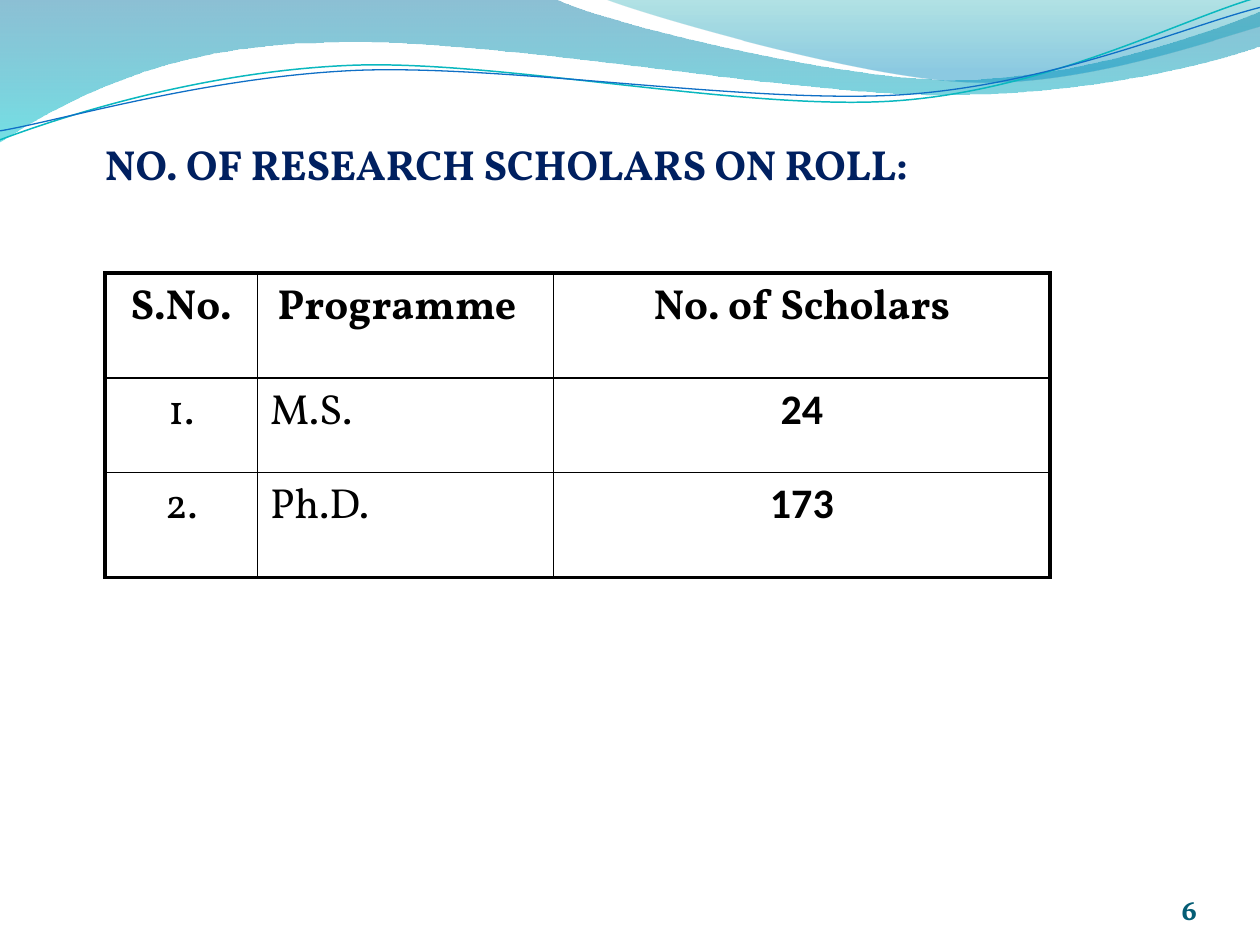
"""Builds a slide that lists the number of research scholars on roll."""
from dataclasses import dataclass
from math import cos, radians, sin

from lxml import etree
from pptx import Presentation
from pptx.dml.color import RGBColor
from pptx.enum.text import MSO_ANCHOR, PP_ALIGN
from pptx.oxml.ns import qn
from pptx.util import Cm, Pt

LEFT, CENTER, RIGHT = PP_ALIGN.LEFT, PP_ALIGN.CENTER, PP_ALIGN.RIGHT
BOTTOM = MSO_ANCHOR.BOTTOM
SERIF, SANS = "Vollkorn", "Calibri"
BLACK = "000000"
THIN, THICK = 1, 2.25
MARGIN = 2.12

Point = tuple[float, float]


@dataclass(frozen=True)
class Stop:
    color: str
    position: float
    opacity: int


@dataclass(frozen=True)
class Wave:
    box: tuple[float, float, float, float]
    start: Point
    segments: tuple[tuple[Point, ...], ...]
    stops: tuple[Stop, ...] = ()
    line_color: str = ""
    line_width: float = 0
    rotation: float = 0


@dataclass(frozen=True)
class Label:
    text: str
    size: float = 24
    font: str = SERIF
    color: str = BLACK
    bold: bool = True
    align: PP_ALIGN = CENTER


WAVES = (
    Wave((-0.03, -0.03, 25.45, 2.9), (0, -0.03), (
        ((11.18, -0.03),),
        ((12.09, 0.43), (16.87, 1.6), (19.25, 1.6)),
        ((21.67, 1.6), (24.33, 0.66), (25.4, 0.23)),
        ((25.43, 0.91),),
        ((24.97, 1.12), (22.1, 1.93), (18.95, 1.91)),
        ((15.8, 1.91), (9.7, 0.71), (6.53, 0.86)),
        ((3.28, 0.89), (1.17, 2.11), (-0.03, 2.87)),
        ((0, -0.03),),
    ), stops=(Stop("0074A1", 0, 45), Stop("00C6CF", 1, 55))),
    Wave((12.17, -0.03, 13.23, 1.78), (12.17, -0.03), (
        ((12.93, 0.28), (17.32, 1.57), (19.53, 1.65)),
        ((21.74, 1.75), (24.41, 0.81), (25.4, 0.53)),
        ((25.4, 0),),
        ((12.17, -0.03),),
    ), stops=(Stop("00A1A9", 0, 30), Stop("008BBF", 0.8, 45))),
    Wave((-0.05, 0.56, 25.45, 1.8), (0, 2.82), (
        ((1.22, 2.36), (4.01, 1.45), (7.04, 1.32)),
        ((10.03, 1.19), (15.06, 2.26), (18.11, 2.03)),
        ((21.16, 1.8), (23.83, 0.38), (25.35, -0.05)),
    ), line_color="0AB8BF", line_width=0.85, rotation=357.3),
    Wave((-0.05, 0.76, 25.48, 1.47), (0, 2.64), (
        ((1.19, 2.44), (4.17, 1.55), (7.19, 1.42)),
        ((10.24, 1.3), (15.16, 2.11), (18.21, 1.91)),
        ((21.23, 1.7), (23.9, 0.53), (25.4, 0.15)),
    ), line_color="0F6FC6", line_width=0.75, rotation=357.3),
)

HEADERS = ("S.No.", "Programme", "No. of Scholars")
SCHOLARS = (("1.", "M.S.", "24"), ("2.", "Ph.D.", "173"))
COLUMN_WIDTHS = (3.07, 5.97, 10.01)
ROW_HEIGHTS = (2.12, 1.9, 2.12)


def rgb(value: str) -> RGBColor:
    """Turn a hex string into a colour."""
    return RGBColor.from_string(value)


def to_local(wave: Wave, point: Point) -> Point:
    """Map a slide point into the unrotated box of a wave."""
    left, top, width, height = wave.box
    angle = radians(-wave.rotation)
    x, y = point[0] - left - width / 2, point[1] - top - height / 2
    return (x * cos(angle) - y * sin(angle) + width / 2,
            x * sin(angle) + y * cos(angle) + height / 2)


def add_step(outline, tag: str, wave: Wave, points: tuple[Point, ...]) -> None:
    """Append a move, line or curve to an outline."""
    step = etree.SubElement(outline, qn(tag))
    for point in points:
        x, y = to_local(wave, point)
        etree.SubElement(step, qn("a:pt"), x=str(int(Cm(x))), y=str(int(Cm(y))))


def draw_wave(slide, wave: Wave) -> None:
    """Draw a gradient band or an open wavy line."""
    builder = slide.shapes.build_freeform(*map(Cm, wave.start))
    builder.add_line_segments(
        [tuple(map(Cm, segment[-1])) for segment in wave.segments], close=False)
    shape = builder.convert_to_shape()
    shape.left, shape.top, shape.width, shape.height = map(Cm, wave.box)
    shape.rotation = wave.rotation
    shape.shadow.inherit = False
    outline = next(shape.element.iter(qn("a:path")))
    for step in list(outline):
        outline.remove(step)
    outline.set("w", str(int(shape.width)))
    outline.set("h", str(int(shape.height)))
    add_step(outline, "a:moveTo", wave, (wave.start,))
    for segment in wave.segments:
        add_step(outline, "a:lnTo" if len(segment) == 1 else "a:cubicBezTo", wave, segment)
    if not wave.stops:
        shape.fill.background()
        shape.line.color.rgb = rgb(wave.line_color)
        shape.line.width = Pt(wave.line_width)
        return
    etree.SubElement(outline, qn("a:close"))
    shape.line.fill.background()
    shape.fill.gradient()
    shape.fill.gradient_angle = 270
    for target, stop in zip(shape.fill.gradient_stops, wave.stops):
        target.color.rgb = rgb(stop.color)
        target.position = stop.position
    for color, stop in zip(shape.element.iter(qn("a:srgbClr")), wave.stops):
        etree.SubElement(color, qn("a:alpha"), val=str(stop.opacity * 1000))


def write(frame, label: Label) -> None:
    """Write a label into the first paragraph of a text frame."""
    paragraph = frame.paragraphs[0]
    paragraph.alignment = label.align
    run = paragraph.add_run()
    run.text = label.text
    run.font.size = Pt(label.size)
    run.font.name = label.font
    run.font.bold = label.bold
    run.font.color.rgb = rgb(label.color)


def draw_text(slide, box: tuple[float, float, float, float], label: Label,
              inset_top: float = 0) -> None:
    """Place a bottom-anchored text box."""
    frame = slide.shapes.add_textbox(*map(Cm, box)).text_frame
    frame.word_wrap = True
    frame.vertical_anchor = BOTTOM
    frame.margin_left = frame.margin_right = frame.margin_bottom = Cm(0)
    frame.margin_top = Cm(inset_top)
    write(frame, label)


def set_borders(cell, outer_sides: dict[str, bool]) -> None:
    """Give a cell thick outer and thin inner borders."""
    properties = cell._tc.get_or_add_tcPr()
    for index, (side, is_outer) in enumerate(outer_sides.items()):
        width = Pt(THICK if is_outer else THIN)
        border = etree.Element(qn(f"a:ln{side}"), w=str(int(width)))
        fill = etree.SubElement(border, qn("a:solidFill"))
        etree.SubElement(fill, qn("a:srgbClr"), val=BLACK)
        properties.insert(index, border)


def cell_label(row: int, column: int, text: str) -> Label:
    """Choose the style of a table entry from its place."""
    is_header, is_count = row == 0, column == 2
    return Label(text, font=SANS if is_count and not is_header else SERIF,
                 bold=is_header or is_count,
                 align=LEFT if column == 1 and not is_header else CENTER)


def draw_table(slide, left: float, top: float) -> None:
    """Draw the table of scholars per programme."""
    entries = (HEADERS, *SCHOLARS)
    last_row, last_column = len(entries) - 1, len(HEADERS) - 1
    size = Cm(sum(COLUMN_WIDTHS)), Cm(sum(ROW_HEIGHTS))
    table = slide.shapes.add_table(
        len(entries), len(HEADERS), Cm(left), Cm(top), *size).table
    table.first_row = table.horz_banding = False
    for column, width in zip(table.columns, COLUMN_WIDTHS):
        column.width = Cm(width)
    for row, height in zip(table.rows, ROW_HEIGHTS):
        row.height = Cm(height)
    for r, texts in enumerate(entries):
        for c, text in enumerate(texts):
            cell = table.cell(r, c)
            cell.fill.background()
            set_borders(cell, {"L": c == 0, "R": c == last_column,
                               "T": r == 0, "B": r == last_row})
            write(cell.text_frame, cell_label(r, c, text))
            cell.text_frame.paragraphs[0].space_before = Pt(4.8)
    table.cell(0, 1).margin_right = Cm(0.6)


def main() -> None:
    """Build and save the slide."""
    deck = Presentation()
    deck.slide_width, deck.slide_height = Cm(25.4), Cm(19.05)
    slide = deck.slides.add_slide(deck.slide_layouts[6])
    for wave in WAVES:
        draw_wave(slide, wave)
    draw_text(slide, (MARGIN, 0.63, 21.59, 3.18), Label(
        "NO. OF RESEARCH SCHOLARS ON ROLL:", color="002060", align=LEFT), 0.13)
    draw_text(slide, (22.02, 17.65, 2.11, 1.02),
              Label("6", size=16, color="045D75", align=RIGHT))
    draw_table(slide, MARGIN, 5.5)
    deck.save("out.pptx")


if __name__ == "__main__":
    main()
